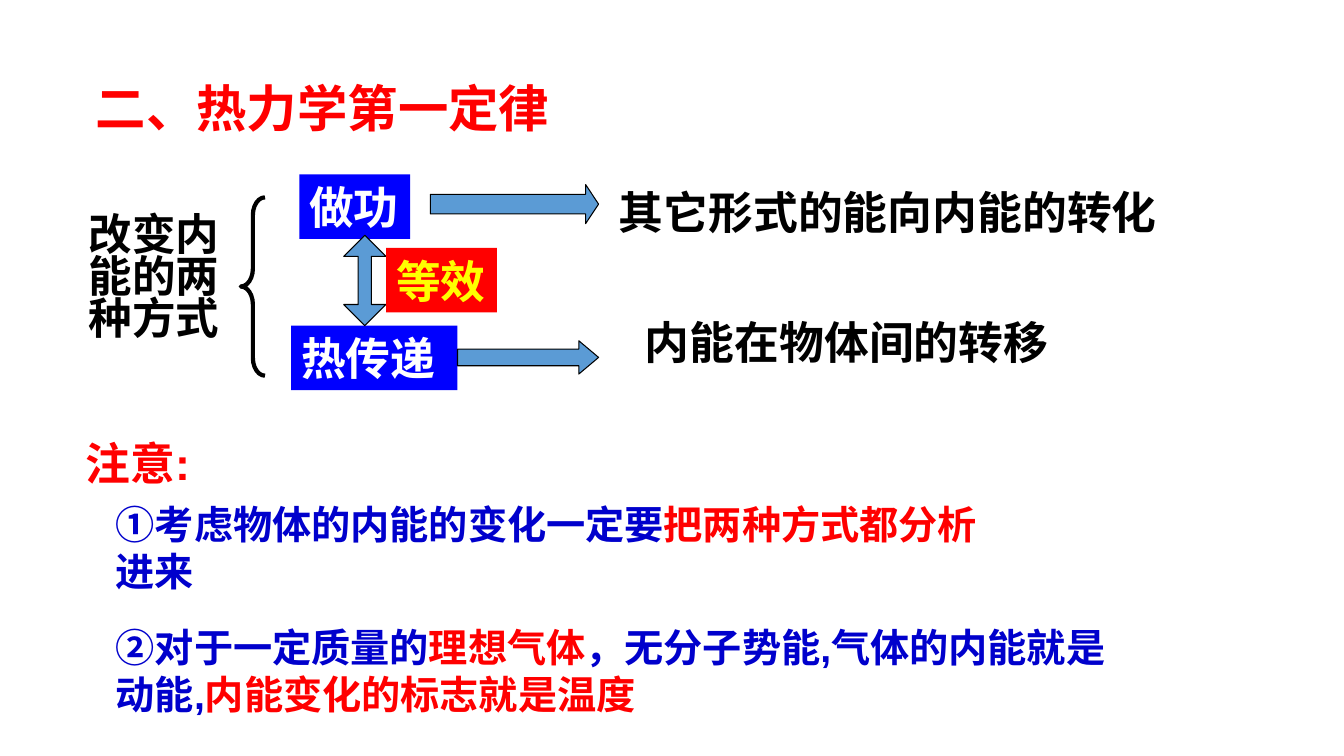
from pptx import Presentation
from pptx.dml.color import RGBColor
from pptx.enum.shapes import MSO_SHAPE
from pptx.enum.text import MSO_ANCHOR, PP_ALIGN
from pptx.util import Pt

COLORS = {
    "black": "000000", "white": "FFFFFF", "red": "FF0000", "blue": "0000FF",
    "navy": "0000CC", "yellow": "FFFF00", "sky": "5B9BD5",
}
CJK = "Noto Sans CJK SC"


def tint(name):
    return RGBColor.from_string(COLORS[name])


class Board:
    def __init__(self, deck):
        self.slide = deck.slides.add_slide(deck.slide_layouts[5])

    def letter(self, shape, runs, size, pad=(7.2, 3.6), line=None):
        """Fill a shape with one paragraph of (text, colour, font) runs."""
        frame = shape.text_frame
        frame.word_wrap = True
        frame.vertical_anchor = MSO_ANCHOR.MIDDLE
        frame.margin_left = frame.margin_right = Pt(pad[0])
        frame.margin_top = frame.margin_bottom = Pt(pad[1])
        par = frame.paragraphs[0]
        par.alignment = PP_ALIGN.LEFT
        par.line_spacing = line
        for text, color, font in runs:
            run = par.add_run()
            run.text = text
            run.font.name = font
            run.font.size = Pt(size)
            run.font.bold = True
            run.font.color.rgb = tint(color)

    def title(self, text, box):
        shape = self.slide.shapes.title
        shape.left, shape.top, shape.width, shape.height = map(Pt, box)
        self.letter(shape, [(text, "red", "Calibri")], 36, (9.4, 4.3), 0.9)

    def text(self, runs, box, size=32, **style):
        shape = self.slide.shapes.add_textbox(*map(Pt, box))
        self.letter(shape, runs, size, **style)

    def shape(self, kind, box, fill=None, line=None, width=0.75, adjust=()):
        shape = self.slide.shapes.add_shape(kind, *map(Pt, box))
        shape.shadow.inherit = False
        if fill:
            shape.fill.solid()
            shape.fill.fore_color.rgb = tint(fill)
        else:
            shape.fill.background()
        if line:
            shape.line.color.rgb = tint(line)
            shape.line.width = Pt(width)
        else:
            shape.line.fill.background()
        for i, value in enumerate(adjust):
            shape.adjustments[i] = value
        return shape

    def label(self, text, box, fill, color):
        shape = self.shape(MSO_SHAPE.RECTANGLE, box, fill)
        self.letter(shape, [(text, color, "Arial")], 32)

    def arrow(self, kind, box, head):
        self.shape(kind, box, "sky", "black", adjust=(0.5, head))


def main():
    deck = Presentation()
    deck.slide_width, deck.slide_height = Pt(960), Pt(540)
    board = Board(deck)

    board.title("二、热力学第一定律", (59, 27.4, 828, 104.4))
    board.text([("改变内能的两种方式", "black", "Calibri")],
               (54, 147.6, 135.4, 104.4), 31.1, pad=(9.4, 4.3), line=0.8)
    board.shape(MSO_SHAPE.LEFT_BRACE, (172, 141, 17.3, 127.4),
                line="black", width=3, adjust=(0.734, 0.5))

    board.label("做功", (213.8, 124.6, 79.2, 46), "blue", "white")
    board.label("热传递", (208, 232.6, 118.8, 46), "blue", "white")
    board.arrow(MSO_SHAPE.UP_DOWN_ARROW, (245.5, 168, 30.2, 64.6), 0.311)
    board.arrow(MSO_SHAPE.RIGHT_ARROW, (307.4, 131.8, 120.2, 28), 0.33)
    board.arrow(MSO_SHAPE.RIGHT_ARROW, (326.8, 243.4, 100.8, 23.8), 0.593)
    board.label("等效", (275.8, 177.1, 79.2, 46), "red", "yellow")

    board.text([("其它形式的能向内能的转化", "black", CJK)],
               (435, 128.2, 405.4, 46))
    board.text([("内能在物体间的转移", "black", CJK)], (453.6, 221, 306, 46))

    board.text([("注意:", "red", "Arial")], (54, 307.4, 136, 46))
    board.text([
        ("①", "navy", CJK),
        ("考虑物体的内能的变化一定要", "navy", "Arial"),
        ("把两种方式都分析", "red", "Arial"),
        ("进来", "navy", "Arial"),
    ], (75.6, 353.5, 639.4, 75), 28)
    board.text([
        ("②", "navy", CJK),
        ("对于一定质量的", "navy", "Arial"),
        ("理想气体", "red", "Arial"),
        ("，无分子势能,气体的内能就是动能,", "navy", "Arial"),
        ("内能变化的标志就是温度", "red", "Arial"),
    ], (75.6, 441.4, 738, 75), 28)

    deck.save("out.pptx")


if __name__ == "__main__":
    main()
